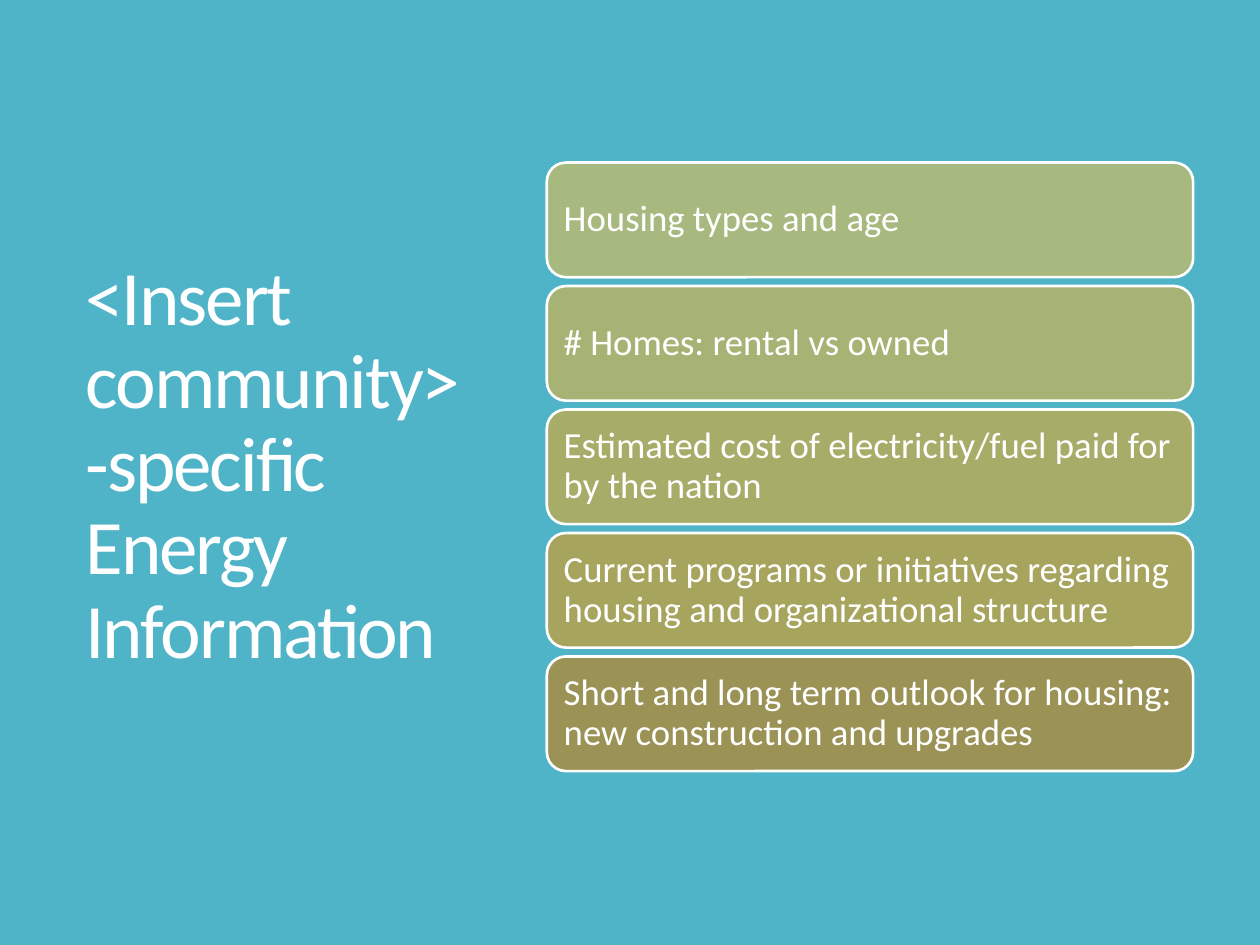
"""Build the community energy information slide."""
import pptx
import pptx.dml.color
import pptx.enum.shapes
import pptx.enum.text
import pptx.util

Inches = pptx.util.Inches
COLOURS = {"background": "50B4C8", "white": "FFFFFF"}
HEADING = "<Insert community> -specific Energy Information"
TOPICS = [
    ("Housing types and age", "A8B97F"),
    ("# Homes: rental vs owned", "A7B374"),
    ("Estimated cost of electricity/fuel paid for by the nation", "A7AC68"),
    ("Current programs or initiatives regarding housing and organizational structure", "A6A45D"),
    ("Short and long term outlook for housing: new construction and upgrades", "9B9256"),
]
LEFT, TOP, WIDTH, HEIGHT, PITCH = 4.34, 1.29, 5.13, 0.91, 0.98
INSET = 0.09


def rgb(value):
    return pptx.dml.color.RGBColor.from_string(value)


def write(frame, text, size):
    frame.text = text
    frame.word_wrap = True
    frame.auto_size = pptx.enum.text.MSO_AUTO_SIZE.NONE
    frame.vertical_anchor = pptx.enum.text.MSO_ANCHOR.MIDDLE
    paragraph = frame.paragraphs[0]
    paragraph.alignment = pptx.enum.text.PP_ALIGN.LEFT
    paragraph.line_spacing = 0.9
    paragraph.font.name = "Calibri"
    paragraph.font.size = pptx.util.Pt(size)
    paragraph.font.color.rgb = rgb(COLOURS["white"])
    return paragraph


def add_heading(slide):
    heading = slide.shapes.title
    heading.left, heading.top = Inches(0.58), Inches(0.7)
    heading.width, heading.height = Inches(3.28), Inches(6.01)
    paragraph = write(heading.text_frame, HEADING, 44)
    paragraph.runs[0].font._element.set("spc", "-120")


def add_topic(slide, row, text, fill):
    card = slide.shapes.add_shape(
        pptx.enum.shapes.MSO_SHAPE.ROUNDED_RECTANGLE,
        Inches(LEFT), Inches(TOP + row * PITCH), Inches(WIDTH), Inches(HEIGHT))
    card.shadow.inherit = False
    card.fill.solid()
    card.fill.fore_color.rgb = rgb(fill)
    card.line.color.rgb = rgb(COLOURS["white"])
    card.line.width = pptx.util.Pt(1.5)
    frame = card.text_frame
    frame.margin_left = frame.margin_right = Inches(INSET)
    frame.margin_top = frame.margin_bottom = Inches(INSET)
    write(frame, text, 21)


def main():
    deck = pptx.Presentation()
    deck.slide_width, deck.slide_height = Inches(10), Inches(7.5)
    slide = deck.slides.add_slide(deck.slide_layouts.get_by_name("Title Only"))
    slide.background.fill.solid()
    slide.background.fill.fore_color.rgb = rgb(COLOURS["background"])
    add_heading(slide)
    for row, (text, fill) in enumerate(TOPICS):
        add_topic(slide, row, text, fill)
    deck.save("out.pptx")


if __name__ == "__main__":
    main()
